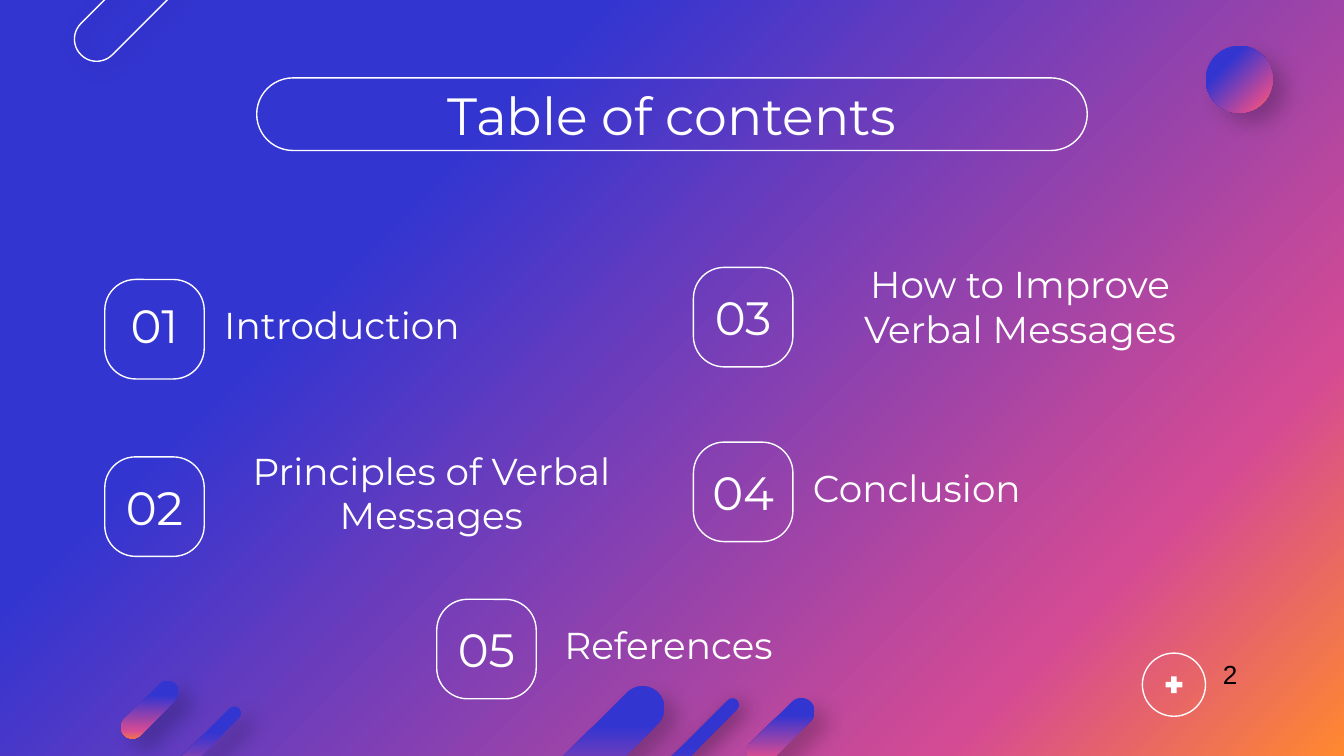
from dataclasses import dataclass

from lxml import etree
from pptx import Presentation
from pptx.dml.color import RGBColor
from pptx.enum.shapes import MSO_SHAPE as Shape
from pptx.enum.text import MSO_ANCHOR as Anchor, PP_ALIGN as Align
from pptx.oxml.ns import qn
from pptx.util import Inches, Pt

UNIT = Inches(0.1)
COLS, ROWS = 100, 56.25
BADGE, NUMBER = 7.4, 6.4
LABEL_W, LABEL_H = 32.8, 8.1


@dataclass(frozen=True)
class Theme:
    white: str = "FFFFFF"
    black: str = "000000"
    stops: tuple = ((0, "3335D1"), (29, "3335D1"), (81, "D54B93"), (100, "FF882F"))
    font: str = "Montserrat"
    page_font: str = "Arial"
    title: int = 28
    number: int = 25
    label: int = 20
    page: int = 14
    outline: float = 0.75


THEME = Theme()
SOFT = (22, 9, 40)
CLOSE = (40, 3.8, 40)

PILLS = [
    (42.2, 49.4, 3.3, 14.5, SOFT),
    (48.1, 49.5, 1, 17.7, CLOSE),
    (10.3, 50.1, 1.7, 5.4, SOFT),
    (13.9, 51.3, 1, 9.6, SOFT),
    (57.1, 51.3, 2, 6.3, SOFT),
]

TOPICS = [
    ("01", "Introduction", 7.8, 20.8, 21, 15.7, 20.1, Align.LEFT),
    ("02", "Principles of Verbal Messages", 7.8, 34, 34.5, 15.7, 32.6, Align.CENTER),
    ("03", "How to Improve Verbal Messages", 51.6, 19.9, 20.4, 59.5, 18.7, Align.CENTER),
    ("04", "Conclusion", 51.6, 32.9, 33.4, 59.5, 32.2, Align.LEFT),
    ("05", "References", 32.5, 44.6, 45.1, 41, 43.9, Align.LEFT),
]


def grid(*cells):
    return [int(c * UNIT) for c in cells]


def rgb(color):
    return RGBColor.from_string(color)


def set_gradient(fill, element):
    fill.gradient()
    fill.gradient_angle = 315
    stops = next(element.iter(qn("a:gsLst")))
    for old in list(stops):
        stops.remove(old)
    for pos, color in THEME.stops:
        gs = etree.SubElement(stops, qn("a:gs"), pos=str(pos * 1000))
        etree.SubElement(gs, qn("a:srgbClr"), val=color)


def set_shadow(sp, alpha, distance, angle):
    effects = sp.element.spPr.find(qn("a:effectLst"))
    outer = etree.SubElement(
        effects, qn("a:outerShdw"), blurRad=str(Pt(11.25)), dist=str(Pt(distance)),
        dir=str(angle * 60000), algn="bl", rotWithShape="0")
    color = etree.SubElement(outer, qn("a:srgbClr"), val=THEME.black)
    etree.SubElement(color, qn("a:alpha"), val=str(alpha * 1000))


def add_shape(s, kind, box, adj=None, rotation=0):
    sp = s.shapes.add_shape(kind, *grid(*box))
    sp.shadow.inherit = False
    sp.rotation = rotation
    if adj is not None:
        sp.adjustments[0] = adj
    return sp


def add_outline(s, kind, box, adj=None, rotation=0):
    sp = add_shape(s, kind, box, adj, rotation)
    sp.fill.background()
    sp.line.color.rgb = rgb(THEME.white)
    sp.line.width = Pt(THEME.outline)
    return sp


def add_gradient(s, kind, box, shadow, adj=None, rotation=0):
    sp = add_shape(s, kind, box, adj, rotation)
    sp.line.fill.background()
    set_gradient(sp.fill, sp.element)
    set_shadow(sp, *shadow)


def add_text(s, text, box, size, align=Align.LEFT, inset=(1, 1),
             font=THEME.font, color=THEME.white, anchor=Anchor.MIDDLE):
    tf = s.shapes.add_textbox(*grid(*box)).text_frame
    tf.word_wrap = True
    tf.vertical_anchor = anchor
    tf.margin_left = tf.margin_right = grid(inset[0])[0]
    tf.margin_top = tf.margin_bottom = grid(inset[1])[0]
    p = tf.paragraphs[0]
    p.text = text
    p.alignment = align
    p.font.name = font
    p.font.size = Pt(size)
    p.font.color.rgb = rgb(color)


def add_decor(s):
    for *box, shadow in PILLS:
        add_gradient(s, Shape.ROUNDED_RECTANGLE, box, shadow, 0.5, 45)
    pill = add_outline(s, Shape.ROUNDED_RECTANGLE, (9.5, -8.3, 3.3, 14.5), 0.5, 45)
    set_shadow(pill, *CLOSE)
    add_gradient(s, Shape.OVAL, (89.7, 3.4, 5, 5), (22, 9, 41))
    add_outline(s, Shape.OVAL, (85, 48.6, 4.7, 4.7))
    plus = add_shape(s, Shape.MATH_PLUS, (86.5, 50.1, 1.7, 1.7), 0.235)
    plus.fill.solid()
    plus.fill.fore_color.rgb = rgb(THEME.white)
    plus.line.fill.background()


def add_title(s, text):
    add_outline(s, Shape.ROUNDED_RECTANGLE, (19.1, 5.8, 61.8, 5.4), 0.5)
    add_text(s, text, (7.8, 6, 84.4, 5), THEME.title, Align.CENTER)


def add_topic(s, number, label, x, y, number_y, label_x, label_y, align):
    add_outline(s, Shape.ROUNDED_RECTANGLE, (x, y, BADGE, BADGE), 0.31)
    number_x = x + (BADGE - NUMBER) / 2
    add_text(s, number, (number_x, number_y, NUMBER, NUMBER), THEME.number,
             Align.CENTER, (0, 1))
    add_text(s, label, (label_x, label_y, LABEL_W, LABEL_H), THEME.label, align)


def main():
    prs = Presentation()
    prs.slide_width, prs.slide_height = grid(COLS, ROWS)
    s = prs.slides.add_slide(prs.slide_layouts[6])
    set_gradient(s.background.fill, s.element)
    add_decor(s)
    add_title(s, "Table of contents")
    for topic in TOPICS:
        add_topic(s, *topic)
    add_text(s, "2", (90, 48.5, 3.1, 3.4), THEME.page, inset=(1, 0.5),
             font=THEME.page_font, color=THEME.black, anchor=Anchor.TOP)
    prs.save("out.pptx")


if __name__ == "__main__":
    main()
